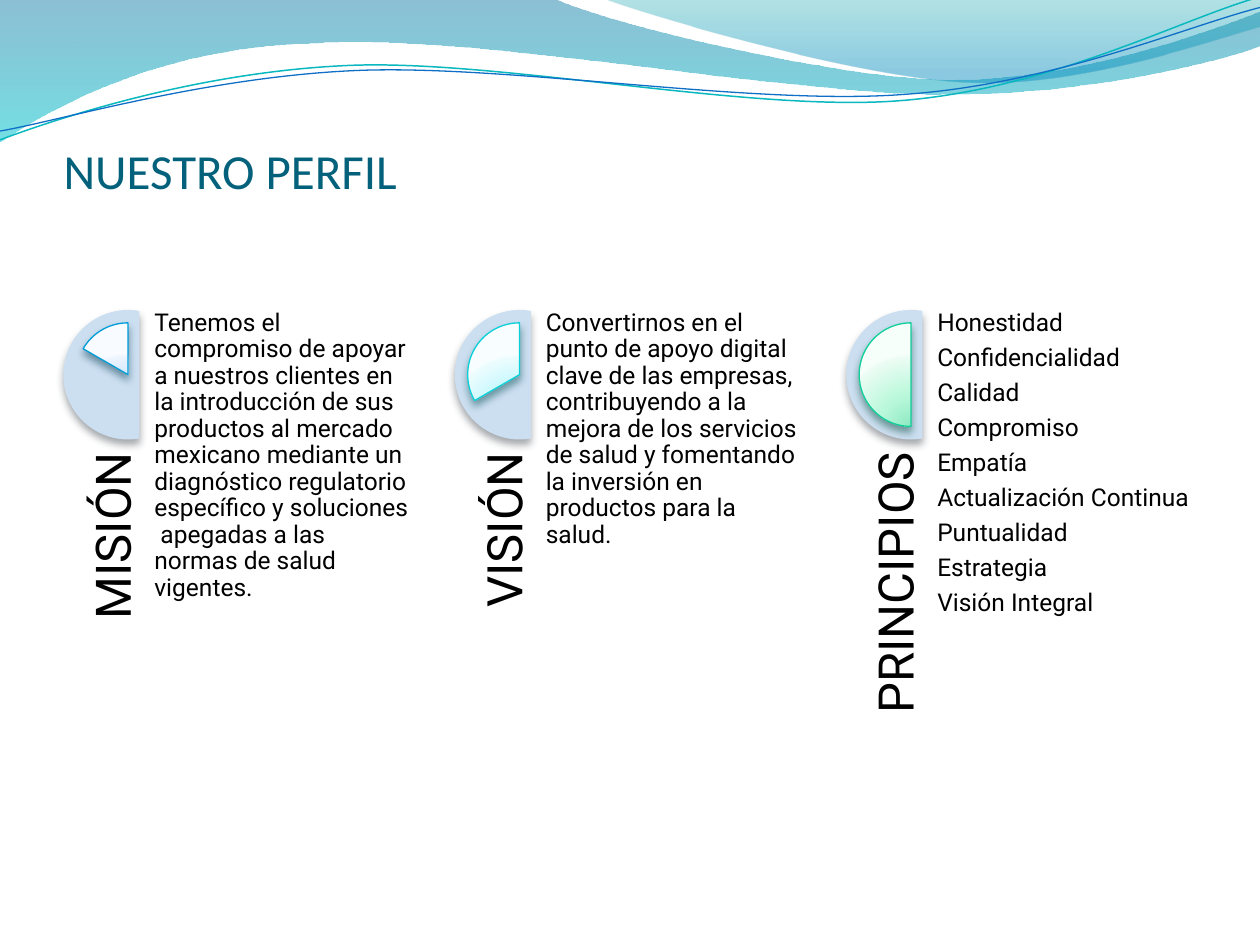
"""Build the profile slide: waves, a title and three columns."""
from dataclasses import dataclass
from math import cos, radians, sin

from pptx import Presentation
from pptx.dml.color import RGBColor
from pptx.enum.shapes import MSO_SHAPE
from pptx.enum.text import MSO_ANCHOR, PP_ALIGN
from pptx.oxml import parse_xml
from pptx.oxml.ns import nsdecls, qn
from pptx.util import Pt


@dataclass(frozen=True)
class Theme:
    """Colours, fonts and type sizes."""
    title: str = "04617B"
    ink: str = "000000"
    disc: str = "CCDFF1"
    shade: str = "474E55"
    band: tuple = ((0, "0074A1", 45), (100, "00C6CF", 55))
    crest: tuple = ((0, "00A1A9", 30), (80, "008BBF", 45))
    teal: str = "0AB8BF"
    blue: str = "0F6FC6"
    head: str = "Calibri"
    text: str = "Roboto"
    large: int = 28
    small: int = 14


THEME = Theme()
TILT = 357.3
TOP, LEFT, PITCH = 177.1, 36.2, 223.7
DISC, WEDGE = 74, 59.2

BAND = [(0, 0), (316.8, -0.7), (342.7, 12.2, 478.1, 45.4, 545.8, 45.4),
        (614.2, 45.4, 689.8, 18.7, 720, 6.5), (720.7, 25.9),
        (707.8, 31.7, 626.4, 54.7, 537.1, 54),
        (447.8, 54, 275, 20.2, 185, 24.5),
        (92.9, 25.9, 33.1, 59.8, -0.7, 81.4)]
CREST = [(344.9, -0.7), (366.5, 7.9, 491, 44.6, 553.7, 46.8),
         (616.3, 49.7, 691.9, 23, 720, 15.1), (720, 0)]
UPPER = [(0, 79.9), (34.6, 67, 113.8, 41, 199.4, 37.4),
         (284.4, 33.8, 427, 64.1, 513.4, 57.6),
         (599.8, 51.1, 675.4, 10.8, 718.6, -1.4)]
LOWER = [(0, 74.9), (33.8, 69.1, 118.1, 43.9, 203.8, 40.3),
         (290.2, 36.7, 429.8, 60.5, 516.2, 54),
         (601.9, 48.2, 677.5, 15.1, 720, 4.3)]

COLUMNS = [
    ("MISIÓN", 126, "009DD9", "00374C",
     ("8BC2F1", "B9DBFD", "EAF3FE", "F8FBFF"),
     ["Tenemos el compromiso de apoyar a nuestros clientes en la introducción "
      "de sus productos al mercado mexicano mediante un diagnóstico "
      "regulatorio específico y soluciones  apegadas a las normas de salud "
      "vigentes."]),
    ("VISIÓN", 90, "0BD0D9", "024B4E",
     ("8BE9F1", "B9F7FD", "EAFCFE", "F8FEFF"),
     ["Convertirnos en el punto de apoyo digital clave de las empresas, "
      "contribuyendo a la mejora de los servicios de salud y fomentando la "
      "inversión en productos para la salud."]),
    ("PRINCIPIOS", 54, "10CF9B", "044A37",
     ("8DEAC2", "BAF8DB", "EAFCF3", "F7FFFB"),
     ["Honestidad", "Confidencialidad", "Calidad", "Compromiso", "Empatía",
      "Actualización Continua", "Puntualidad", "Estrategia",
      "Visión Integral"]),
]


def blend(shape, stops, round_off=False):
    """Fill a shape with a downward or a round gradient."""
    marks = "".join(
        f'<a:gs pos="{pos * 1000}"><a:srgbClr val="{tint}">'
        f'<a:alpha val="{alpha * 1000}"/></a:srgbClr></a:gs>'
        for pos, tint, alpha in stops)
    course = ('<a:path path="circle"><a:fillToRect l="50000" t="130000" '
              'r="50000" b="-30000"/></a:path>' if round_off
              else '<a:lin ang="5400000" scaled="0"/>')
    shape.fill.gradient()
    props = shape._element.spPr
    props.replace(props.find(qn("a:gradFill")), parse_xml(
        f'<a:gradFill {nsdecls("a")} rotWithShape="1"><a:gsLst>{marks}'
        f'</a:gsLst>{course}</a:gradFill>'))


def shade(shape, tint):
    """Cast a soft shadow below a shape."""
    shape.shadow.inherit = False
    shape._element.spPr.find(qn("a:effectLst")).append(parse_xml(
        f'<a:outerShdw {nsdecls("a")} blurRad="{Pt(4.5)}" dist="{Pt(3)}" '
        f'dir="5400000" algn="ctr" rotWithShape="0"><a:srgbClr val="{tint}">'
        '<a:alpha val="48000"/></a:srgbClr></a:outerShdw>'))


def edge(shape, tint=None, width=0.75):
    """Draw or remove the line of a shape."""
    if tint is None:
        shape.line.fill.background()
    else:
        shape.line.color.rgb = RGBColor.from_string(tint)
        shape.line.width = Pt(width)


def level(dot, hub):
    """Turn a point back about the hub, so that the tilt restores it."""
    angle = radians(360 - TILT)
    x, y = dot[0] - hub[0], dot[1] - hub[1]
    return (hub[0] + x * cos(angle) - y * sin(angle),
            hub[1] + x * sin(angle) + y * cos(angle))


def bend(shape, legs):
    """Join each three points of a curved leg into one cubic."""
    lines = iter(list(shape._element.spPr.iter(qn("a:lnTo"))))
    for leg in legs[1:]:
        first = next(lines)
        if len(leg) == 6:
            curve = parse_xml(f'<a:cubicBezTo {nsdecls("a")}/>')
            first.addprevious(curve)
            for line in (first, next(lines), next(lines)):
                curve.append(line[0])
                line.getparent().remove(line)


def wave(slide, legs, stops=None, tint=None, width=0.75, hub=None):
    """Add a filled band, or an open line tilted about its hub."""
    dots = [leg[i:i + 2] for leg in legs for i in range(0, len(leg), 2)]
    if hub:
        dots = [level(dot, hub) for dot in dots]
    start, *rest = [(Pt(x), Pt(y)) for x, y in dots]
    form = slide.shapes.build_freeform(*start, scale=1)
    form.add_line_segments(rest, close=bool(stops))
    shape = form.convert_to_shape()
    bend(shape, legs)
    shape.shadow.inherit = False
    if stops:
        blend(shape, stops)
    else:
        shape.fill.background()
        shape.rotation = TILT
    edge(shape, tint, width)


def slice_of(slide, kind, x, y, size, start, end):
    """Add a part of a circle that runs between two angles."""
    shape = slide.shapes.add_shape(kind, Pt(x), Pt(y), Pt(size), Pt(size))
    shape.adjustments[0], shape.adjustments[1] = start, end
    return shape


def write(slide, lines, box, size, font=THEME.text, tint=THEME.ink, turn=0,
          align=PP_ALIGN.LEFT, anchor=MSO_ANCHOR.TOP, lead=0.9, after=0):
    """Add a text box with one paragraph for each line."""
    shape = slide.shapes.add_textbox(*map(Pt, box))
    shape.rotation = turn
    frame = shape.text_frame
    frame.word_wrap = True
    frame.vertical_anchor = anchor
    frame.margin_left = frame.margin_right = Pt(0)
    frame.margin_top = frame.margin_bottom = Pt(0)
    for spot, line in enumerate(lines):
        para = frame.add_paragraph() if spot else frame.paragraphs[0]
        para.alignment, para.line_spacing = align, lead
        para.space_after = Pt(after)
        run = para.add_run()
        run.text = line
        run.font.name, run.font.size = font, Pt(size)
        run.font.color.rgb = RGBColor.from_string(tint)


def column(slide, x, name, start, line, dark, tints, lines):
    """Add a disc with its wedge, an upright name and the text."""
    disc = slice_of(slide, MSO_SHAPE.CHORD, x, TOP, DISC, 48, 168)
    disc.fill.solid()
    disc.fill.fore_color.rgb = RGBColor.from_string(THEME.disc)
    edge(disc)
    shade(disc, THEME.shade)
    inset = (DISC - WEDGE) / 2
    wedge = slice_of(slide, MSO_SHAPE.PIE, x + inset, TOP + inset, WEDGE, start, 162)
    blend(wedge, [(pos, tint, 100) for pos, tint in zip((0, 43, 93, 100), tints)], True)
    edge(wedge, line)
    shade(wedge, dark)
    write(slide, [name], (x - 85, 343.4, 214.6, 44.6), THEME.large, turn=270,
          align=PP_ALIGN.RIGHT, anchor=MSO_ANCHOR.BOTTOM)
    write(slide, lines, (x + 52, TOP, 148.3, 296.6), THEME.small, after=4.9)


def main():
    """Build and save the slide."""
    deck = Presentation()
    deck.slide_width, deck.slide_height = Pt(720), Pt(540)
    slide = deck.slides.add_slide(deck.slide_layouts[6])
    wave(slide, BAND, THEME.band)
    wave(slide, CREST, THEME.crest)
    wave(slide, UPPER, tint=THEME.teal, width=0.85, hub=(359.3, 41.4))
    wave(slide, LOWER, tint=THEME.blue, hub=(359.6, 42.5))
    for spot, part in enumerate(COLUMNS):
        column(slide, LEFT + spot * PITCH, *part)
    write(slide, ["NUESTRO PERFIL"], (36.4, 23.8, 648, 90), THEME.large,
          font=THEME.head, tint=THEME.title, anchor=MSO_ANCHOR.BOTTOM, lead=1)
    deck.save("out.pptx")


if __name__ == "__main__":
    main()
